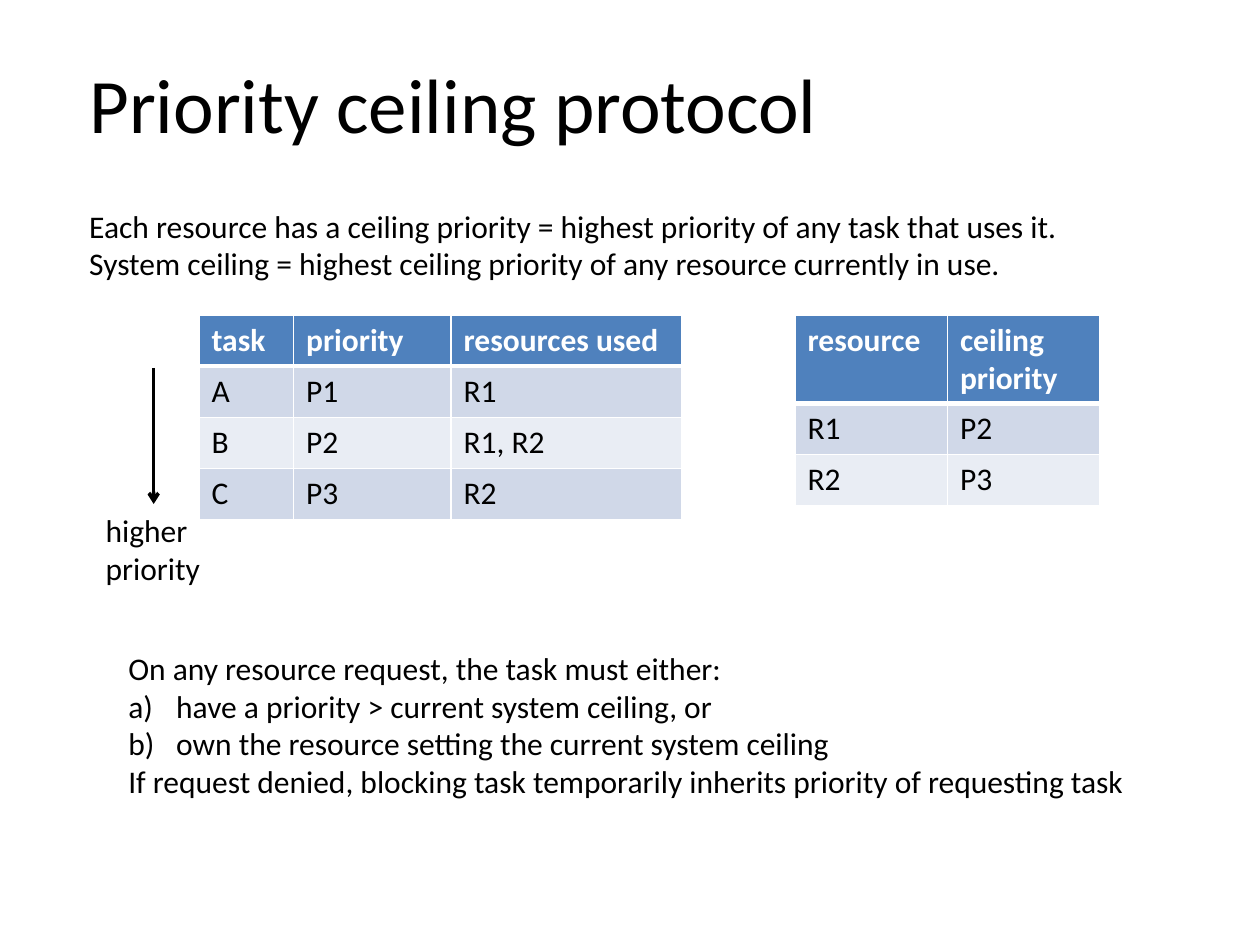
"""Build a slide that explains the priority ceiling protocol."""
from dataclasses import dataclass

from lxml import etree
from pptx import Presentation
from pptx import util as u
from pptx.dml.color import RGBColor
from pptx.enum import shapes, text
from pptx.oxml.ns import qn

WIDTH, HEIGHT = u.Inches(10), u.Inches(7.5)
COLUMN, ROW = WIDTH / 100, HEIGHT / 75
FONT = "Calibri"
BLACK, WHITE = "000000", "FFFFFF"
HEADER, BANDS = "4F81BD", ("D0D8E8", "E9EDF4")


@dataclass
class Box:
    """Place on the slide in grid columns and rows."""
    left: float
    top: float
    width: float
    height: float

    def lengths(self) -> tuple:
        return across(self.left), down(self.top), across(self.width), down(self.height)


@dataclass
class Grid:
    """A table with its place, column widths and row heights."""
    left: float
    top: float
    widths: list
    heights: list
    records: list


@dataclass
class Passage:
    """A text block; lines listed in choices are lettered."""
    box: Box
    lines: list
    wrap: bool = True
    choices: tuple = ()


def across(columns: float) -> int:
    """Convert grid columns to a length."""
    return round(columns * COLUMN)


def down(rows: float) -> int:
    """Convert grid rows to a length."""
    return round(rows * ROW)


def colour(value: str) -> RGBColor:
    """Turn a hex string into a colour."""
    return RGBColor.from_string(value)


def write(frame, lines: list, size: float = 18, ink: str = BLACK,
          bold: bool = False, wrap: bool = True, choices: tuple = ()) -> None:
    """Fill a text frame with formatted paragraphs."""
    frame.word_wrap = wrap
    for index, line in enumerate(lines):
        paragraph = frame.add_paragraph() if index else frame.paragraphs[0]
        paragraph.alignment = text.PP_ALIGN.LEFT
        run = paragraph.add_run()
        run.text = line
        run.font.name, run.font.size, run.font.bold = FONT, u.Pt(size), bold
        run.font.color.rgb = colour(ink)
        if index in choices:
            letter(paragraph)


def letter(paragraph) -> None:
    """Give a paragraph a hanging a), b) label."""
    properties = paragraph._p.get_or_add_pPr()
    indent = u.Inches(0.38)
    properties.set("marL", str(indent))
    properties.set("indent", str(-indent))
    etree.SubElement(properties, qn("a:buFont"), typeface="+mj-lt")
    etree.SubElement(properties, qn("a:buAutoNum"), type="alphaLcParenR")


def add_title(slide, heading: str, box: Box) -> None:
    """Move and format the title placeholder."""
    title = slide.shapes.title
    title.left, title.top, title.width, title.height = box.lengths()
    write(title.text_frame, [heading], size=44, wrap=False)
    title.text_frame.auto_size = text.MSO_AUTO_SIZE.SHAPE_TO_FIT_TEXT
    title.text_frame.vertical_anchor = text.MSO_ANCHOR.TOP


def add_passage(slide, passage: Passage) -> None:
    """Draw a text block."""
    frame = slide.shapes.add_textbox(*passage.box.lengths()).text_frame
    write(frame, passage.lines, wrap=passage.wrap, choices=passage.choices)
    frame.auto_size = text.MSO_AUTO_SIZE.SHAPE_TO_FIT_TEXT


def add_borders(cell, bottom: float, top: float) -> None:
    """Draw white lines around a cell."""
    properties = cell._tc.get_or_add_tcPr()
    for side, points in (("L", 1), ("R", 1), ("T", top), ("B", bottom)):
        edge = etree.SubElement(properties, qn(f"a:ln{side}"), w=str(u.Pt(points)))
        fill = etree.SubElement(edge, qn("a:solidFill"))
        etree.SubElement(fill, qn("a:srgbClr"), val=WHITE)


def add_grid(slide, grid: Grid) -> None:
    """Draw a table with a header and banded rows."""
    box = Box(grid.left, grid.top, sum(grid.widths), sum(grid.heights))
    table = slide.shapes.add_table(
        len(grid.heights), len(grid.widths), *box.lengths()).table
    for column, width in zip(table.columns, grid.widths):
        column.width = across(width)
    for index, (row, height) in enumerate(zip(table.rows, grid.heights)):
        row.height = down(height)
        is_header = index == 0
        for cell, entry in zip(row.cells, grid.records[index]):
            write(cell.text_frame, [entry], bold=is_header,
                  ink=WHITE if is_header else BLACK)
            add_borders(cell, bottom=3 if is_header else 1, top=3 if index == 1 else 1)
            cell.fill.solid()
            cell.fill.fore_color.rgb = colour(
                HEADER if is_header else BANDS[(index - 1) % 2])


def add_arrow(slide, column: float, start: float, end: float) -> None:
    """Draw a downward arrow."""
    arrow = slide.shapes.add_connector(
        shapes.MSO_CONNECTOR.STRAIGHT,
        across(column), down(start), across(column), down(end))
    arrow.line.color.rgb = colour(BLACK)
    arrow.line.width = u.Pt(2)
    etree.SubElement(arrow.line._get_or_add_ln(), qn("a:tailEnd"), type="arrow")
    etree.SubElement(arrow._element.spPr, qn("a:effectLst"))


DEFINITIONS = Passage(Box(6.1, 15.9, 89.2, 7.1), [
    "Each resource has a ceiling priority = highest priority of any task that uses it.",
    "System ceiling = highest ceiling priority of any resource currently in use."])
RULES = Passage(Box(9.2, 51, 82.5, 13.1), [
    "On any resource request, the task must either:",
    "have a priority > current system ceiling, or",
    "own the resource setting the current system ceiling",
    "If request denied, blocking task temporarily inherits priority of requesting task",
], choices=(1, 2))
DIRECTION = Passage(Box(7.4, 40.1, 9.6, 7.1), ["higher", "priority"], wrap=False)
TASKS = Grid(15.8, 25, [7.5, 12.5, 18.3], [4.06] * 4, [
    ("task", "priority", "resources used"),
    ("A", "P1", "R1"), ("B", "P2", "R1, R2"), ("C", "P3", "R2")])
CEILINGS = Grid(63.1, 25, [12.1] * 2, [6.9, 4.06, 4.06], [
    ("resource", "ceiling priority"), ("R1", "P2"), ("R2", "P3")])


def main() -> None:
    """Assemble and save the slide."""
    deck = Presentation()
    deck.slide_width, deck.slide_height = WIDTH, HEIGHT
    slide = deck.slides.add_slide(deck.slide_layouts.get_by_name("Title Only"))
    add_title(slide, "Priority ceiling protocol", Box(6.1, 4, 60.4, 8.4))
    add_passage(slide, DEFINITIONS)
    add_passage(slide, RULES)
    add_grid(slide, TASKS)
    add_arrow(slide, 12.2, 29.2, 40)
    add_passage(slide, DIRECTION)
    add_grid(slide, CEILINGS)
    deck.save("out.pptx")


if __name__ == "__main__":
    main()
